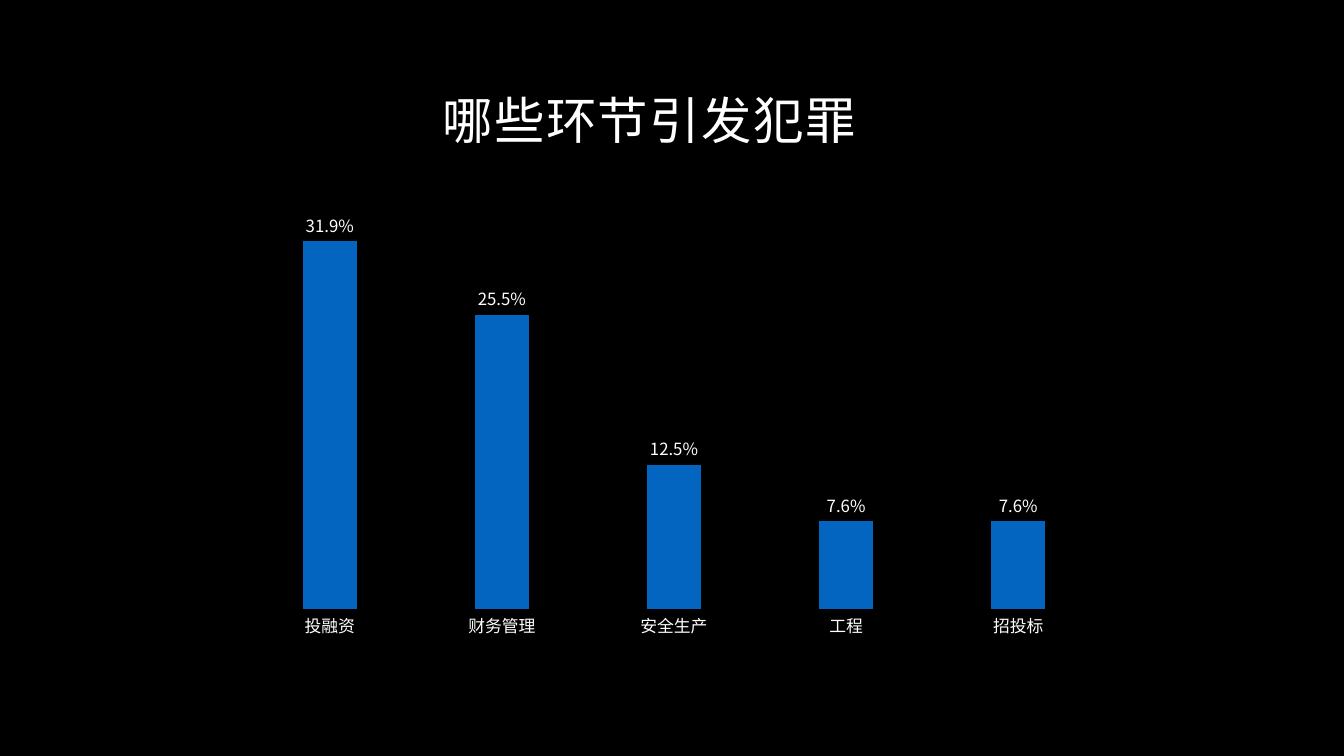
from dataclasses import dataclass

from lxml.etree import SubElement
from pptx import Presentation
from pptx.chart.data import CategoryChartData
from pptx.dml.color import RGBColor
from pptx.enum.chart import XL_CHART_TYPE, XL_LABEL_POSITION, XL_TICK_MARK
from pptx.enum.text import MSO_ANCHOR, MSO_AUTO_SIZE, PP_ALIGN
from pptx.oxml.ns import qn
from pptx.slide import Slide
from pptx.text.text import Font
from pptx.util import Inches, Pt


@dataclass(frozen=True)
class Theme:
    face: str = "Noto Sans CJK SC"
    back: RGBColor = RGBColor(0x00, 0x00, 0x00)
    ink: RGBColor = RGBColor(0xFF, 0xFF, 0xFF)
    bar: RGBColor = RGBColor(0x03, 0x65, 0xC0)
    title: int = 36
    label: int = 12
    chart: int = 10


@dataclass(frozen=True)
class Stage:
    name: str
    share: float


THEME = Theme()
STAGES = [
    Stage("投融资", 0.319),
    Stage("财务管理", 0.255),
    Stage("安全生产", 0.125),
    Stage("工程", 0.076),
    Stage("招投标", 0.076),
]


def style(font: Font, size: int) -> None:
    font.size = Pt(size)
    font.bold = False
    font.color.rgb = THEME.ink
    font.name = THEME.face


def add_title(slide: Slide, text: str) -> None:
    title = slide.shapes.title
    title.left, title.top = Inches(4.26), Inches(0.65)
    title.width, title.height = Inches(4.36), Inches(0.89)
    frame = title.text_frame
    frame.text = text
    frame.word_wrap = False
    frame.auto_size = MSO_AUTO_SIZE.SHAPE_TO_FIT_TEXT
    frame.vertical_anchor = MSO_ANCHOR.TOP
    para = frame.paragraphs[0]
    para.alignment = PP_ALIGN.CENTER
    para.line_spacing = 1.3
    style(para.font, THEME.title)
    # East Asian face and letter spacing
    props = para._p.pPr.find(qn("a:defRPr"))
    props.set("spc", "110")
    SubElement(props, qn("a:ea")).set("typeface", THEME.face)


def add_bars(slide: Slide, stages: list[Stage]) -> None:
    data = CategoryChartData(number_format="0.0%")
    data.categories = [stage.name for stage in stages]
    data.add_series("Series 1", [stage.share for stage in stages])
    chart = slide.shapes.add_chart(
        XL_CHART_TYPE.COLUMN_CLUSTERED,
        Inches(2.24), Inches(1.95), Inches(8.89), Inches(4.47), data,
    ).chart
    chart.has_legend = False
    chart.has_title = False
    style(chart.font, THEME.chart)

    # Axes
    names = chart.category_axis
    names.major_tick_mark = XL_TICK_MARK.NONE
    names.format.line.fill.background()
    style(names.tick_labels.font, THEME.label)
    scale = chart.value_axis
    scale.visible = False
    scale.has_major_gridlines = False
    scale.minimum_scale, scale.maximum_scale = 0, 0.35

    # Bars and their labels
    plot = chart.plots[0]
    plot.gap_width, plot.overlap = 219, -27
    plot.vary_by_categories = False
    fill = plot.series[0].format.fill
    fill.solid()
    fill.fore_color.rgb = THEME.bar
    plot.has_data_labels = True
    labels = plot.data_labels
    labels.show_value = True
    labels.position = XL_LABEL_POSITION.OUTSIDE_END
    labels.number_format = "0.0%"
    labels.number_format_is_linked = False
    style(labels.font, THEME.label)


def main() -> None:
    deck = Presentation()
    deck.slide_width, deck.slide_height = Inches(13.33), Inches(7.5)
    slide = deck.slides.add_slide(deck.slide_layouts.get_by_name("Title Only"))
    slide.background.fill.solid()
    slide.background.fill.fore_color.rgb = THEME.back
    add_title(slide, "哪些环节引发犯罪")
    add_bars(slide, STAGES)
    deck.save("out.pptx")


if __name__ == "__main__":
    main()
